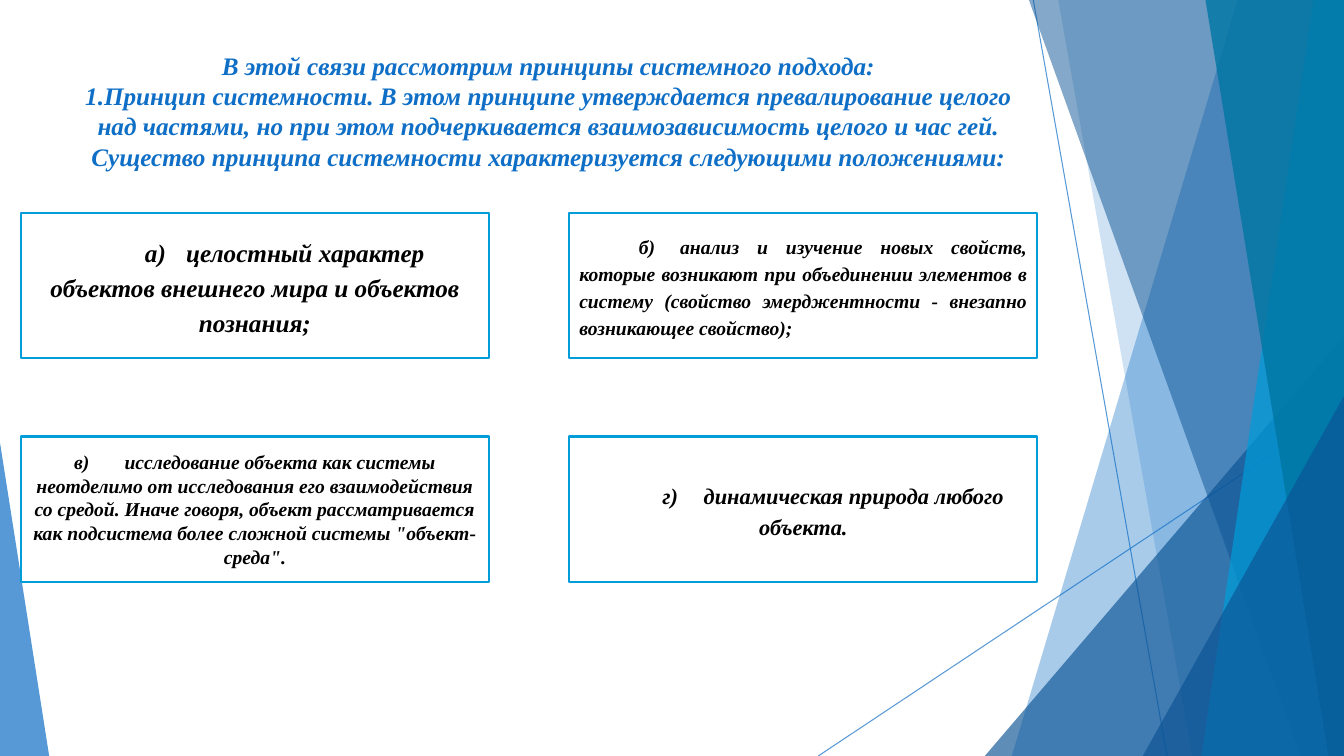
from dataclasses import dataclass

from lxml.etree import SubElement
from pptx import Presentation
from pptx.dml.color import RGBColor
from pptx.enum.shapes import MSO_CONNECTOR, MSO_SHAPE
from pptx.enum.text import MSO_ANCHOR, MSO_AUTO_SIZE, PP_ALIGN
from pptx.oxml.ns import qn
from pptx.util import Cm, Pt

TITLE = (
    "В этой связи рассмотрим принципы системного подхода:\v"
    "1.Принцип системности. В этом принципе утверждается превалирование целого "
    "над частями, но при этом подчеркивается взаимозависимость целого и час гей. "
    "Существо принципа системности характеризуется следующими положениями:"
)


@dataclass(frozen=True)
class Theme:
    font: str = "Times New Roman"
    blue: str = "0F6FC6"
    navy: str = "0B5394"
    sky: str = "009DD9"
    teal: str = "0076A3"
    white: str = "FFFFFF"
    black: str = "000000"
    large: int = 18
    medium: int = 16
    small: int = 14


THEME = Theme()
HANGING = {"spacing": 1.15, "indent": 1.5}

# Row by row: text, type size, paragraph format
PRINCIPLES = [
    ("а)\tцелостный характер объектов внешнего мира и объектов познания;",
     THEME.large, {**HANGING, "tab": 1.14}),
    ("б)\tанализ и изучение новых свойств, которые возникают при объединении "
     "элементов в систему (свойство эмерджентности - внезапно возникающее свойство);",
     THEME.small, {**HANGING, "tab": 1.22, "align": PP_ALIGN.JUSTIFY}),
    ("в)\tисследование объекта как системы неотделимо от исследования его "
     "взаимодействия со средой. Иначе говоря, объект рассматривается как "
     "подсистема более сложной системы \"объект-среда\".",
     THEME.small, {}),
    ("г)\tдинамическая природа любого объекта.",
     THEME.medium, {**HANGING, "tab": 1.24}),
]

WIDTH, HEIGHT = 33.87, 19.05
COLUMNS = 2
BOX_LEFT, BOX_TOP, BOX_WIDTH, BOX_HEIGHT = 0.53, 5.36, 11.79, 3.66
COLUMN_STEP, ROW_STEP = 13.82, 5.64

RAYS = [((26.04, 0), (29.41, HEIGHT)), ((WIDTH, 10.24), (20.62, HEIGHT))]
# Facet: top x, bottom x. Wedge: left, top, width, apex position.
DECOR = [
    ("facet", (31.19, 25.5), THEME.blue, 36),
    ("facet", (26.67, 30.05), THEME.blue, 20),
    ("wedge", (24.82, 8.46, 9.05, 1), THEME.navy, 66),
    ("facet", (25.93, 32.79), THEME.navy, 50),
    ("facet", (33.1, 30.28), THEME.sky, 70),
    ("facet", (30.38, 33.48), THEME.teal, 80),
    ("wedge", (28.8, 9.98, 5.07, 1), THEME.navy, 66),
    ("wedge", (0, 11.15, 1.24, 0), THEME.blue, 70),
]


def set_color(fill, color, opacity=100):
    fill.solid()
    fill.fore_color.rgb = RGBColor.from_string(color)
    if opacity < 100:
        clr = fill._xPr.find(".//" + qn("a:srgbClr"))
        SubElement(clr, qn("a:alpha"), val=str(opacity * 1000))


def write(tf, text, size, color, align=PP_ALIGN.CENTER, spacing=None,
          indent=None, tab=None):
    """Fill the first paragraph; indent and tab are in centimetres."""
    tf.word_wrap = True
    p = tf.paragraphs[0]
    p.text = text
    p.alignment = align
    pPr = p._p.get_or_add_pPr()
    if tab is not None:
        tabs = SubElement(pPr, qn("a:tabLst"))
        SubElement(tabs, qn("a:tab"), pos=str(Cm(tab)), algn="l")
    if indent is not None:
        pPr.set("marL", "0")
        pPr.set("indent", str(Cm(indent)))
    if spacing is not None:
        p.line_spacing = spacing
    for r in p.runs:
        r.font.name = THEME.font
        r.font.size = Pt(size)
        r.font.bold = r.font.italic = True
        r.font.color.rgb = RGBColor.from_string(color)


def add_ray(s, start, end):
    line = s.shapes.add_connector(
        MSO_CONNECTOR.STRAIGHT, *(Cm(v) for v in (*start, *end)))
    line.line.width = Pt(0.75)
    set_color(line.line.fill, THEME.blue, 70)
    SubElement(line._element.spPr, qn("a:effectLst"))


def add_facet(s, top_x, bottom_x):
    """Draw a full-height band reaching to the right edge of the slide."""
    corners = [(top_x, 0), (WIDTH, 0), (WIDTH, HEIGHT), (bottom_x, HEIGHT)]
    points = [(Cm(x), Cm(y)) for x, y in corners]
    builder = s.shapes.build_freeform(*points[0])
    builder.add_line_segments(points[1:], close=True)
    return builder.convert_to_shape()


def add_wedge(s, left, top, width, apex):
    sp = s.shapes.add_shape(MSO_SHAPE.ISOSCELES_TRIANGLE, Cm(left), Cm(top),
                            Cm(width), Cm(HEIGHT - top))
    sp.adjustments[0] = apex
    return sp


def add_decor(s):
    for start, end in RAYS:
        add_ray(s, start, end)
    draw = {"facet": add_facet, "wedge": add_wedge}
    for kind, geometry, color, opacity in DECOR:
        sp = draw[kind](s, *geometry)
        sp.shadow.inherit = False
        sp.line.fill.background()
        set_color(sp.fill, color, opacity)


def add_title(s):
    title = s.shapes.title
    title.left, title.top = Cm(1.88), Cm(1.14)
    title.width, title.height = Cm(23.88), Cm(3.66)
    tf = title.text_frame
    tf.auto_size = MSO_AUTO_SIZE.NONE
    tf.vertical_anchor = MSO_ANCHOR.TOP
    write(tf, TITLE, THEME.large, THEME.blue)
    title.element.getparent().append(title.element)  # above the decor


def add_principles(s):
    for i, (text, size, layout) in enumerate(PRINCIPLES):
        row, column = divmod(i, COLUMNS)
        sp = s.shapes.add_shape(
            MSO_SHAPE.RECTANGLE,
            Cm(BOX_LEFT + column * COLUMN_STEP), Cm(BOX_TOP + row * ROW_STEP),
            Cm(BOX_WIDTH), Cm(BOX_HEIGHT))
        sp.shadow.inherit = False
        set_color(sp.fill, THEME.white)
        set_color(sp.line.fill, THEME.sky)
        sp.line.width = Pt(1.5)
        sp.text_frame.vertical_anchor = MSO_ANCHOR.MIDDLE
        write(sp.text_frame, text, size, THEME.black, **layout)


def main():
    prs = Presentation()
    prs.slide_width, prs.slide_height = Cm(WIDTH), Cm(HEIGHT)
    s = prs.slides.add_slide(prs.slide_layouts.get_by_name("Title Only"))
    add_decor(s)
    add_title(s)
    add_principles(s)
    prs.save("out.pptx")


if __name__ == "__main__":
    main()
